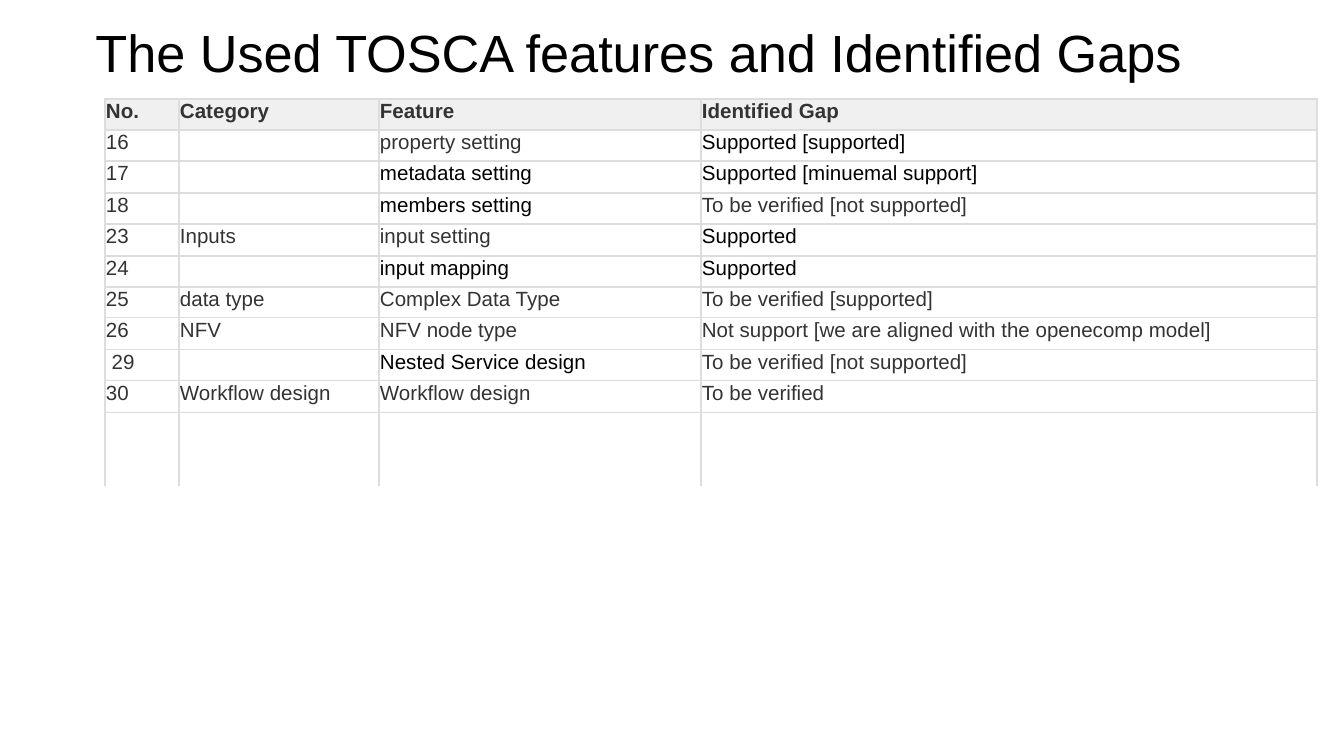
from dataclasses import dataclass

from lxml.etree import SubElement
from pptx import Presentation
from pptx.dml.color import RGBColor
from pptx.enum.text import MSO_ANCHOR, MSO_AUTO_SIZE, PP_ALIGN
from pptx.oxml import parse_xml
from pptx.oxml.ns import nsdecls, qn
from pptx.util import Pt

PX = 6804  # EMU per px, 134.4 px to the inch


@dataclass(frozen=True)
class Theme:
    font: str = "Arial"
    title_size: int = 28
    cell_size: int = 11
    black: str = "000000"
    grey: str = "333333"
    header_fill: str = "F0F0F0"
    border: str = "DDDDDD"
    border_width: int = 1


THEME = Theme()

TITLE = "The Used TOSCA features and Identified Gaps"
TITLE_BOX = (82, 13, 1235, 77)

TABLE_LEFT, TABLE_TOP = 105, 99
COLUMN_WIDTHS = (74, 200, 322, 616)
FILLED_HEIGHT = 314
EMPTY_ROW_HEIGHTS = (30, 43)

HEADER = ("No.", "Category", "Feature", "Identified Gap")
FEATURES = (
    ("16", "", "property setting", "Supported [supported]"),
    ("17", "", "metadata setting", "Supported [minuemal support]"),
    ("18", "", "members setting", "To be verified [not supported]"),
    ("23", "Inputs", "input setting", "Supported"),
    ("24", "", "input mapping", "Supported"),
    ("25", "data type", "Complex Data Type", "To be verified [supported]"),
    ("26", "NFV", "NFV node type",
     "Not support [we are aligned with the openecomp model]"),
    (" 29", "", "Nested Service design", "To be verified [not supported]"),
    ("30", "Workflow design", "Workflow design", "To be verified"),
)
BLACK_TEXTS = {
    "metadata setting", "members setting", "input mapping",
    "Nested Service design", "Supported", "Supported [supported]",
    "Supported [minuemal support]",
}


def px(length):
    return length * PX


def apply(target, values):
    for name, value in values.items():
        setattr(target, name, value)


def style_font(font, size, color, bold=False):
    apply(font, {"name": THEME.font, "size": Pt(size), "bold": bold})
    font.color.rgb = RGBColor.from_string(color)


def add_title(slide):
    title = slide.shapes.title
    apply(title, dict(zip(("left", "top", "width", "height"),
                          map(px, TITLE_BOX))))
    frame = title.text_frame
    frame.text = TITLE
    apply(frame, {"word_wrap": True, "vertical_anchor": MSO_ANCHOR.TOP,
                  "auto_size": MSO_AUTO_SIZE.SHAPE_TO_FIT_TEXT})
    paragraph = frame.paragraphs[0]
    apply(paragraph, {"alignment": PP_ALIGN.LEFT, "line_spacing": 1.0})
    style_font(paragraph.runs[0].font, THEME.title_size, THEME.black)


def set_borders(cell, sides):
    """Draw the given sides (of "LRTB") and clear the others."""
    properties = cell._tc.get_or_add_tcPr()
    for position, side in enumerate("LRTB"):
        line = parse_xml(f'<a:ln{side} {nsdecls("a")}/>')
        if side in sides:
            line.set("w", str(Pt(THEME.border_width)))
            fill = SubElement(line, qn("a:solidFill"))
            SubElement(fill, qn("a:srgbClr"), val=THEME.border)
        else:
            SubElement(line, qn("a:noFill"))
        properties.insert(position, line)


def fill_cell(cell, text, sides, is_header):
    apply(cell, {"margin_left": px(1), "margin_right": px(1),
                 "margin_top": px(1), "margin_bottom": 0,
                 "vertical_anchor": MSO_ANCHOR.TOP})
    if is_header:
        cell.fill.solid()
        cell.fill.fore_color.rgb = RGBColor.from_string(THEME.header_fill)
    else:
        cell.fill.background()
    set_borders(cell, sides)

    paragraph = cell.text_frame.paragraphs[0]
    if text:
        run = paragraph.add_run()
        run.text = text
        color = THEME.black if text in BLACK_TEXTS else THEME.grey
        style_font(run.font, THEME.cell_size, color, is_header)
    else:
        # An empty cell takes its line height from the end-of-paragraph mark.
        SubElement(paragraph._p, qn("a:endParaRPr"),
                   sz=str(THEME.cell_size * 100))


def row_heights(count):
    """Share the filled height out in whole px, then add the empty rows."""
    edges = [FILLED_HEIGHT * i // count for i in range(count + 1)]
    filled = [low - high for high, low in zip(edges, edges[1:])]
    return filled + list(EMPTY_ROW_HEIGHTS)


def add_feature_table(slide):
    filled = (HEADER,) + FEATURES
    empty = ("",) * len(HEADER)
    rows = filled + (empty,) * len(EMPTY_ROW_HEIGHTS)
    row_sides = ["LRTB"] * len(filled) + ["LRT", "LR"]
    heights = row_heights(len(filled))

    table = slide.shapes.add_table(
        len(rows), len(HEADER), px(TABLE_LEFT), px(TABLE_TOP),
        px(sum(COLUMN_WIDTHS)), px(sum(heights))).table
    apply(table, {"first_row": False, "horz_banding": False})
    for column, width in zip(table.columns, COLUMN_WIDTHS):
        column.width = px(width)
    for index, (row, texts) in enumerate(zip(table.rows, rows)):
        row.height = px(heights[index])
        for cell, text in zip(row.cells, texts):
            fill_cell(cell, text, row_sides[index], index == 0)


def main():
    presentation = Presentation()
    apply(presentation, {"slide_width": px(1344), "slide_height": px(756)})
    title_only = presentation.slide_layouts[5]
    slide = presentation.slides.add_slide(title_only)
    add_title(slide)
    add_feature_table(slide)
    presentation.save("out.pptx")


if __name__ == "__main__":
    main()
